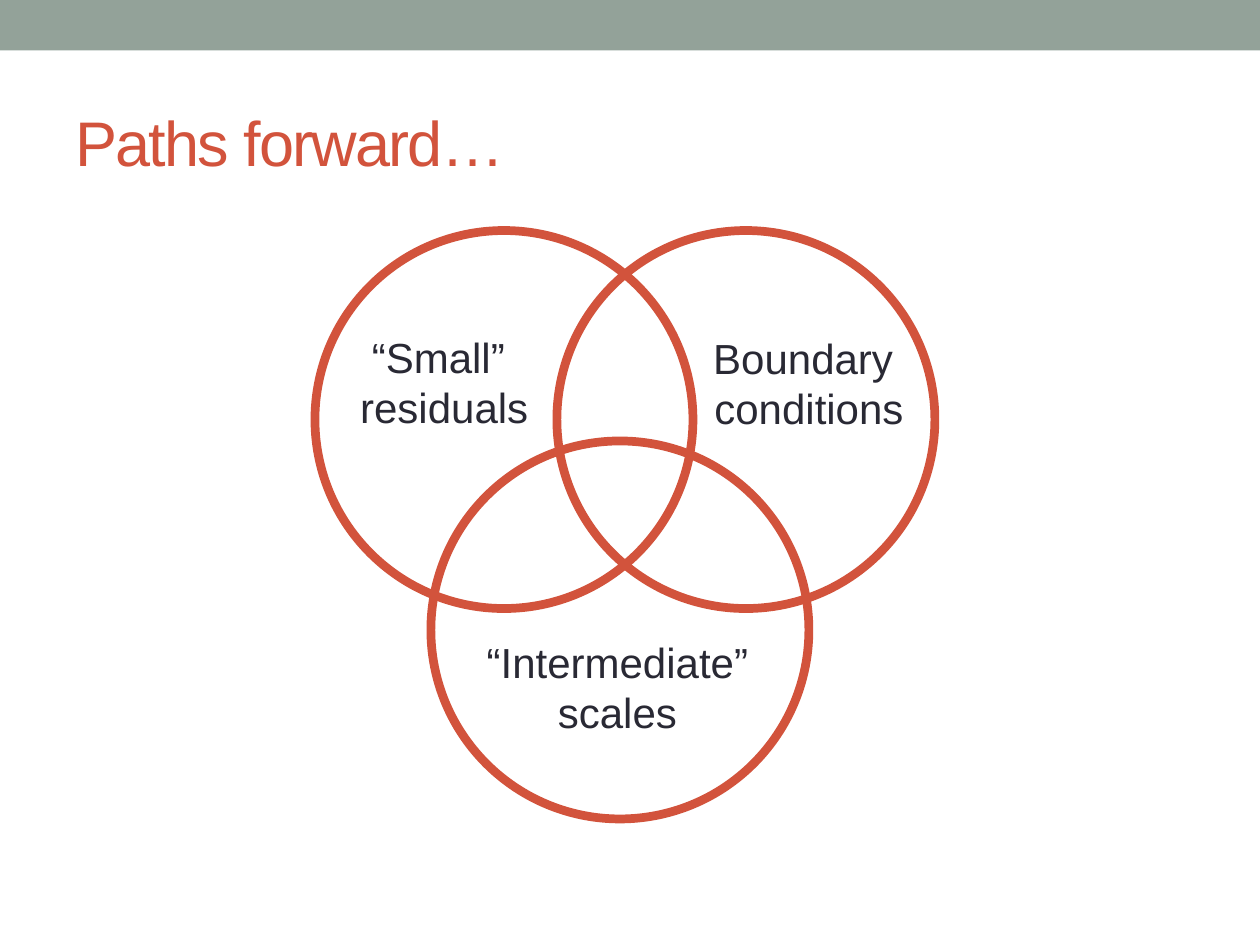
from dataclasses import dataclass

from pptx import Presentation
from pptx.dml.color import RGBColor
from pptx.enum.shapes import MSO_SHAPE
from pptx.enum.text import MSO_ANCHOR, MSO_AUTO_SIZE, PP_ALIGN
from pptx.util import Inches, Pt

WIDTH, HEIGHT = 10, 7.5


@dataclass(frozen=True)
class Theme:
    band: RGBColor = RGBColor(0x93, 0xA2, 0x99)
    accent: RGBColor = RGBColor(0xD2, 0x53, 0x3C)
    text: RGBColor = RGBColor(0x29, 0x29, 0x34)
    font: str = "Arial"
    title_size: int = 36
    label_size: int = 24
    ring_width: int = 5
    title_spacing: int = -100


THEME = Theme()


def add_band(slide, height):
    shape = slide.shapes.add_shape(
        MSO_SHAPE.RECTANGLE, 0, 0, Inches(WIDTH), Inches(height))
    shape.shadow.inherit = False
    shape.fill.solid()
    shape.fill.fore_color.rgb = THEME.band
    shape.line.fill.background()


def add_ring(slide, center_x, center_y, diameter):
    shape = slide.shapes.add_shape(
        MSO_SHAPE.OVAL, Inches(center_x - diameter / 2),
        Inches(center_y - diameter / 2), Inches(diameter), Inches(diameter))
    shape.shadow.inherit = False
    shape.fill.background()
    shape.line.color.rgb = THEME.accent
    shape.line.width = Pt(THEME.ring_width)


def add_run(paragraph, text, size, color):
    run = paragraph.add_run()
    run.text = text
    run.font.name = THEME.font
    run.font.size = Pt(size)
    run.font.color.rgb = color
    return run


def add_title(slide, text):
    box = slide.shapes.add_textbox(
        Inches(0.05 * WIDTH), Inches(0.58), Inches(0.9 * WIDTH), Inches(1.08))
    frame = box.text_frame
    frame.word_wrap = True
    frame.vertical_anchor = MSO_ANCHOR.MIDDLE
    run = add_run(frame.paragraphs[0], text, THEME.title_size, THEME.accent)
    run.font._element.set("spc", str(THEME.title_spacing))


def add_label(slide, lines, left, top, width):
    box = slide.shapes.add_textbox(
        Inches(left), Inches(top), Inches(width), Inches(0.91))
    frame = box.text_frame
    frame.word_wrap = False
    frame.auto_size = MSO_AUTO_SIZE.SHAPE_TO_FIT_TEXT
    for index, line in enumerate(lines):
        paragraph = frame.paragraphs[0] if index == 0 else frame.add_paragraph()
        paragraph.alignment = PP_ALIGN.CENTER
        add_run(paragraph, line, THEME.label_size, THEME.text)


def main():
    presentation = Presentation()
    presentation.slide_width = Inches(WIDTH)
    presentation.slide_height = Inches(HEIGHT)
    slide = presentation.slides.add_slide(presentation.slide_layouts[6])

    add_band(slide, 0.4)
    add_title(slide, "Paths forward…")

    diameter = 0.3 * WIDTH
    for center_x, center_y in ((4, 3.33), (5.92, 3.33), (4.92, 5)):
        add_ring(slide, center_x, center_y, diameter)

    add_label(slide, ("“Small” ", "residuals"), 2.75, 2.58, 1.55)
    add_label(slide, ("“Intermediate”", "scales"), 3.75, 5, 2.3)
    add_label(slide, ("Boundary ", "conditions"), 5.56, 2.59, 1.72)

    presentation.save("out.pptx")


if __name__ == "__main__":
    main()
